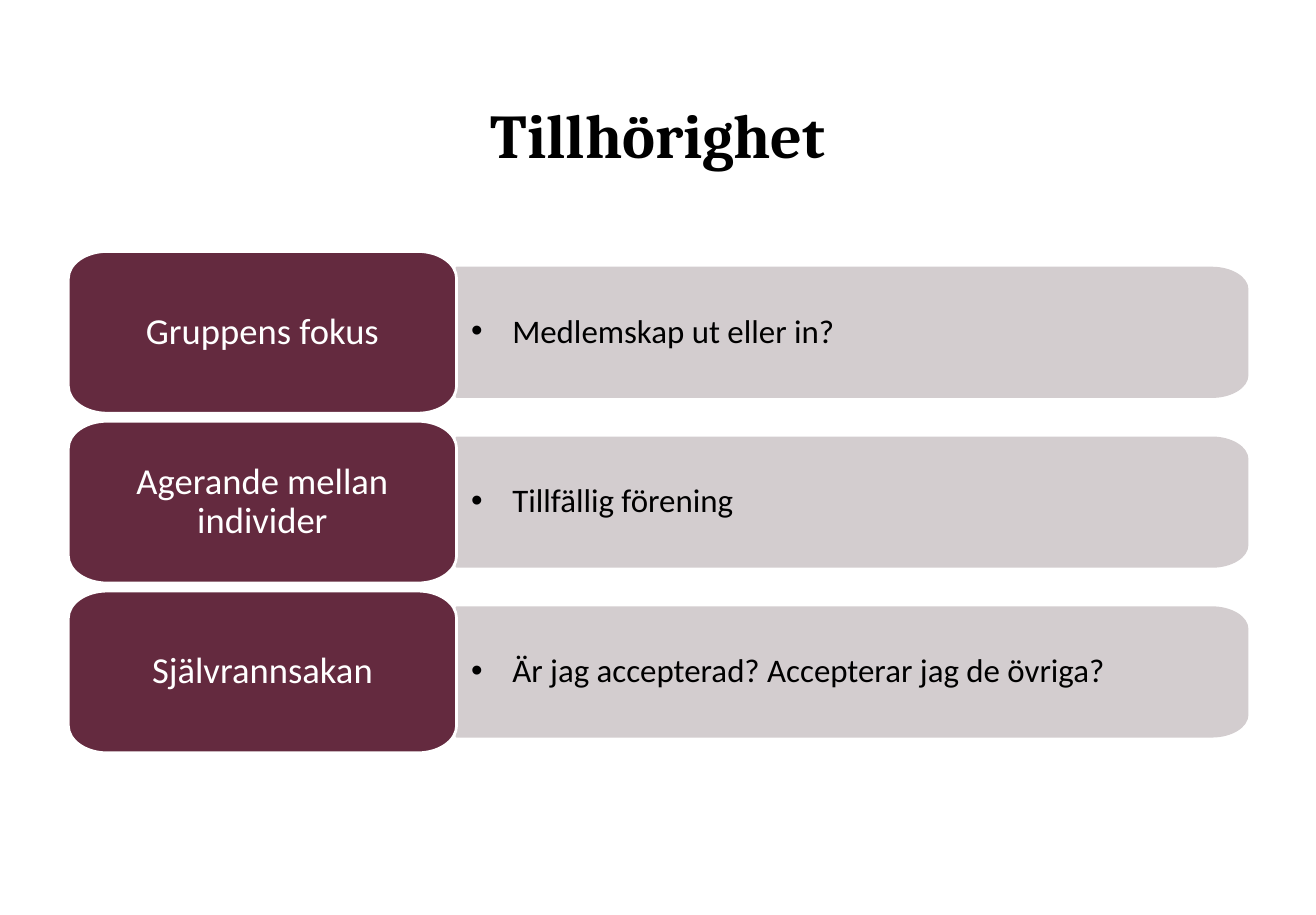
import lxml.etree
import pptx
import pptx.dml.color
import pptx.enum.text
import pptx.oxml.ns
import pptx.util

Pt = pptx.util.Pt
ALIGN = pptx.enum.text.PP_ALIGN
ANCHOR = pptx.enum.text.MSO_ANCHOR
PLUM, GREY, WHITE, BLACK = "642A3F", "D3CDCF", "FFFFFF", "000000"
CARD_WIDE = 212.4
CURVE = 0.45
ROWS = [
    ("Gruppens fokus", "Medlemskap ut eller in?"),
    ("Agerande mellan individer", "Tillfällig förening"),
    ("Självrannsakan", "Är jag accepterad? Accepterar jag de övriga?"),
]


def color(value):
    """Return the colour for a hex string."""
    return pptx.dml.color.RGBColor.from_string(value)


def add_element(parent, tag, **attributes):
    """Append a drawing element with the given attributes."""
    element = lxml.etree.SubElement(parent, pptx.oxml.ns.qn(tag))
    for name, value in attributes.items():
        element.set(name, value)
    return element


def curve_corners(panel, starts):
    """Turn the three lines from each start into one Bezier curve."""
    lines = list(panel.element.iter(pptx.oxml.ns.qn("a:lnTo")))
    for start in starts:
        first, *others = lines[start:start + 3]
        first.tag = pptx.oxml.ns.qn("a:cubicBezTo")
        for line in others:
            first.append(line[0])
            line.getparent().remove(line)


def add_panel(page, box, radii, round_left, fill, line, width):
    """Draw a panel with elliptical corners on the right or on both sides."""
    left, top, wide, high = box
    right, bottom = left + wide, top + high
    radius_x, radius_y = radii
    corners = [(right, top, -1, 1, False), (right, bottom, -1, -1, True)]
    if round_left:
        corners += [(left, bottom, 1, -1, False), (left, top, 1, 1, True)]
    points = []
    for x, y, side_x, side_y, vertical_first in corners:
        along = [(x + side_x * radius_x * part, y) for part in (1, CURVE)]
        down = [(x, y + side_y * radius_y * part) for part in (CURVE, 1)]
        curve = along + down
        points += curve[::-1] if vertical_first else curve
    if not round_left:
        points += [(left, bottom), (left, top)]
    points = [(Pt(x), Pt(y)) for x, y in points]
    builder = page.shapes.build_freeform(*points[0])
    builder.add_line_segments(points[1:], close=True)
    panel = builder.convert_to_shape()
    curve_corners(panel, range(0, 4 * len(corners), 4))
    panel.shadow.inherit = False
    panel.fill.solid()
    panel.fill.fore_color.rgb = color(fill)
    panel.line.color.rgb = color(line)
    panel.line.width = Pt(width)
    return panel


def write(shape, text, font, size, ink, align, anchor, insets, after=0, bullet=False, bold=False):
    """Set one paragraph of text in a shape."""
    frame = shape.text_frame
    frame.word_wrap = True
    frame.vertical_anchor = anchor
    frame.margin_left, frame.margin_top, frame.margin_right, frame.margin_bottom = map(Pt, insets)
    para = frame.paragraphs[0]
    para.text = text
    para.alignment = align
    para.line_spacing = 0.9
    para.space_after = Pt(after)
    if bullet:
        para.level = 1
        properties = para._p.get_or_add_pPr()
        properties.set("marL", str(Pt(22.5)))
        properties.set("indent", str(Pt(-22.5)))
        add_element(properties, "a:buFont", typeface="Arial")
        add_element(properties, "a:buChar", char="•")
    para.font.name = font
    para.font.size = Pt(size)
    para.font.bold = bold
    para.font.color.rgb = color(ink)


def add_title(page, box):
    """Place the slide title."""
    title = page.shapes.add_textbox(*map(Pt, box))
    write(title, "Tillhörighet", "Cambria", 34, BLACK, ALIGN.CENTER, ANCHOR.TOP,
          (7.2, 3.6, 7.2, 3.6), bold=True)


def add_row(page, box, label, answer):
    """Place a label card with its answer bar to the right."""
    left, top, wide, high = box
    bar_high = 0.8 * high
    bar_box = (left + CARD_WIDE, top + (high - bar_high) / 2, wide - CARD_WIDE, bar_high)
    bar = add_panel(page, bar_box, (19.6, 12), False, GREY, GREY, 1)
    write(bar, answer, "Calibri", 18, BLACK, ALIGN.LEFT, ANCHOR.MIDDLE,
          (8, 8, 12, 8), after=2.7, bullet=True)
    card = add_panel(page, (left, top, CARD_WIDE, high), (21.2, 14.8), True, PLUM, WHITE, 1.5)
    write(card, label, "Calibri", 20, WHITE, ALIGN.CENTER, ANCHOR.MIDDLE,
          (21, 13, 21, 13), after=7)


def add_rows(page, box, gap):
    """Stack the rows evenly in the box."""
    left, top, wide, high = box
    row_high = (high - gap * (len(ROWS) - 1)) / len(ROWS)
    for index, (label, answer) in enumerate(ROWS):
        add_row(page, (left, top + index * (row_high + gap), wide, row_high), label, answer)


def main():
    """Build and save the slide."""
    deck = pptx.Presentation()
    deck.slide_width, deck.slide_height = Pt(720), Pt(500.4)
    page = deck.slides.add_slide(deck.slide_layouts[6])
    add_title(page, (224.4, 54, 271.4, 64.8))
    add_rows(page, (37.4, 137.5, 645.2, 274.2), 4.4)
    deck.save("out.pptx")


if __name__ == "__main__":
    main()
